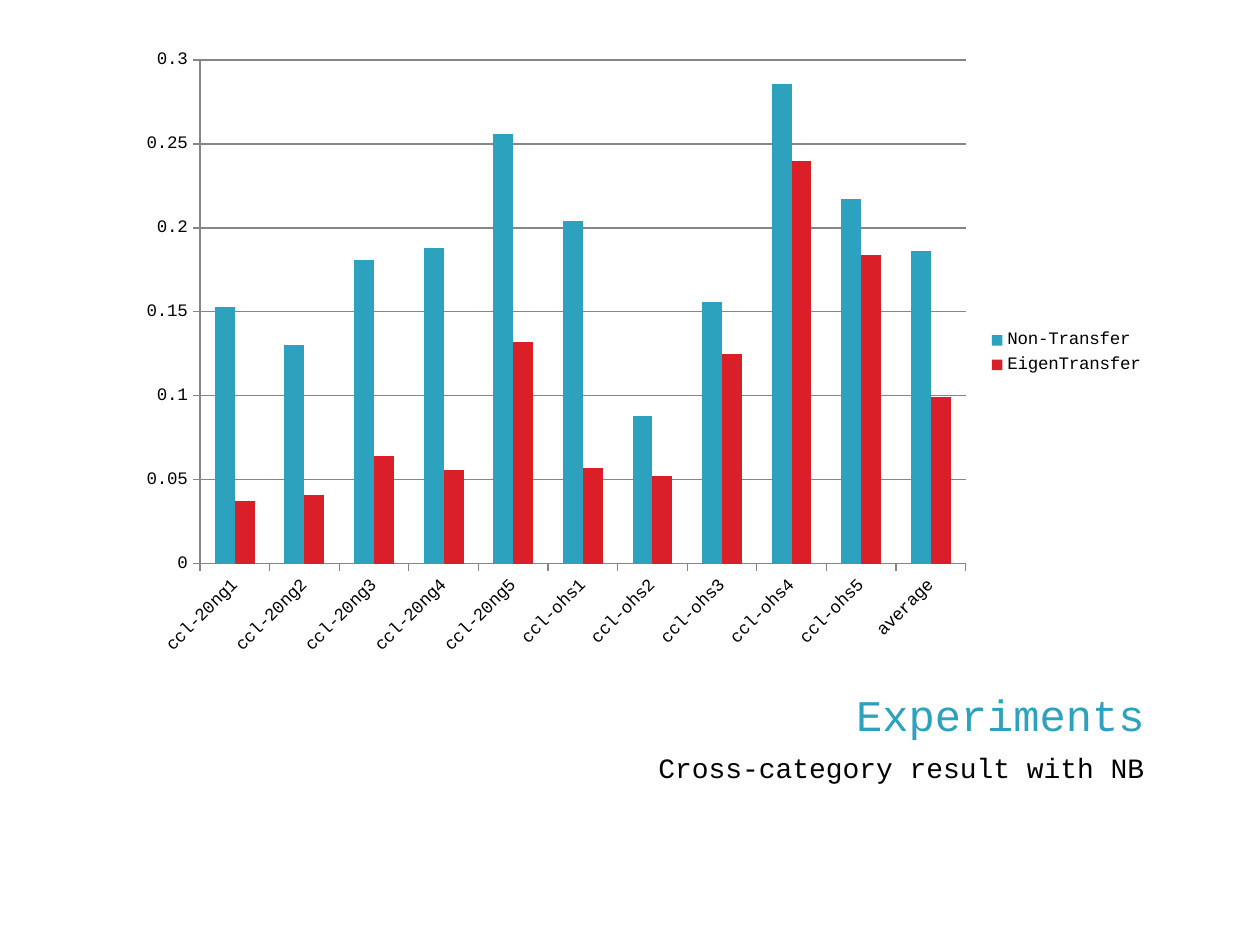
from dataclasses import dataclass

from pptx import Presentation
from pptx.chart.data import CategoryChartData
from pptx.dml.color import RGBColor
from pptx.enum.chart import XL_CHART_TYPE, XL_LEGEND_POSITION, XL_TICK_MARK
from pptx.enum.text import MSO_ANCHOR, PP_ALIGN
from pptx.util import Cm, Pt


@dataclass(frozen=True)
class Theme:
    font: str = "Courier New"
    teal: RGBColor = RGBColor(0x2D, 0xA2, 0xBF)
    red: RGBColor = RGBColor(0xDA, 0x1F, 0x28)
    black: RGBColor = RGBColor(0, 0, 0)
    grey: RGBColor = RGBColor(0x86, 0x86, 0x86)
    title_size: Pt = Pt(25)
    body_size: Pt = Pt(16)
    chart_size: Pt = Pt(10)


theme = Theme()


def add_text(slide, text, *, left, top, width, height, size, color, top_margin):
    shape = slide.shapes.add_textbox(Cm(left), Cm(top), Cm(width), Cm(height))
    frame = shape.text_frame
    frame.word_wrap = True
    frame.vertical_anchor = MSO_ANCHOR.TOP
    frame.margin_top = Cm(top_margin)
    paragraph = frame.paragraphs[0]
    paragraph.text = text
    paragraph.alignment = PP_ALIGN.RIGHT
    paragraph.font.name = theme.font
    paragraph.font.size = size
    paragraph.font.color.rgb = color


presentation = Presentation()
presentation.slide_width = Cm(25.4)
presentation.slide_height = Cm(19.05)
slide = presentation.slides.add_slide(presentation.slide_layouts[6])

# Title and subtitle share the chart's right edge
add_text(slide, "Experiments", left=2.54, top=13.54, width=20.78, height=1.27,
         size=theme.title_size, color=theme.teal, top_margin=0.33)
add_text(slide, "Cross-category result with NB", left=12.27, top=14.88, width=11.05,
         height=2.54, size=theme.body_size, color=theme.black, top_margin=0.25)

# Chart of both methods by data set
chart_data = CategoryChartData()
chart_data.categories = (
    [f"ccl-20ng{number}" for number in range(1, 6)]
    + [f"ccl-ohs{number}" for number in range(1, 6)]
    + ["average"]
)
chart_data.add_series("Non-Transfer", [
    0.153, 0.13, 0.181, 0.188, 0.256, 0.204, 0.088, 0.156, 0.286, 0.217, 0.186])
chart_data.add_series("EigenTransfer", [
    0.037, 0.041, 0.064, 0.056, 0.132, 0.057, 0.052, 0.125, 0.24, 0.184, 0.099])

chart = slide.shapes.add_chart(
    XL_CHART_TYPE.COLUMN_CLUSTERED, Cm(2.54), Cm(0.76), Cm(20.78), Cm(12.7), chart_data
).chart
chart.has_title = False
chart.font.name = theme.font
chart.font.size = theme.chart_size
chart.font.color.rgb = theme.black

chart.has_legend = True
chart.legend.position = XL_LEGEND_POSITION.RIGHT
chart.legend.include_in_layout = False

plot = chart.plots[0]
plot.gap_width = 150
plot.overlap = 0
plot.vary_by_categories = False
for series, color in zip(plot.series, (theme.teal, theme.red)):
    series.format.fill.solid()
    series.format.fill.fore_color.rgb = color

for axis in (chart.category_axis, chart.value_axis):
    axis.major_tick_mark = XL_TICK_MARK.OUTSIDE
    axis.minor_tick_mark = XL_TICK_MARK.NONE
    axis.format.line.color.rgb = theme.grey
    axis.format.line.width = Pt(0.75)

value_axis = chart.value_axis
value_axis.minimum_scale = 0
value_axis.maximum_scale = 0.3
value_axis.major_unit = 0.05
value_axis.has_major_gridlines = True
value_axis.major_gridlines.format.line.color.rgb = theme.grey
value_axis.major_gridlines.format.line.width = Pt(0.75)

# Category labels rise at 45 degrees, in 60000ths of a degree
label_font = chart.category_axis.tick_labels.font
label_font.name = theme.font
label_font.size = theme.chart_size
label_font.color.rgb = theme.black
body_properties = chart.category_axis.tick_labels._element.txPr.bodyPr
body_properties.set("rot", str(-45 * 60000))
body_properties.set("vert", "horz")

presentation.save("out.pptx")
